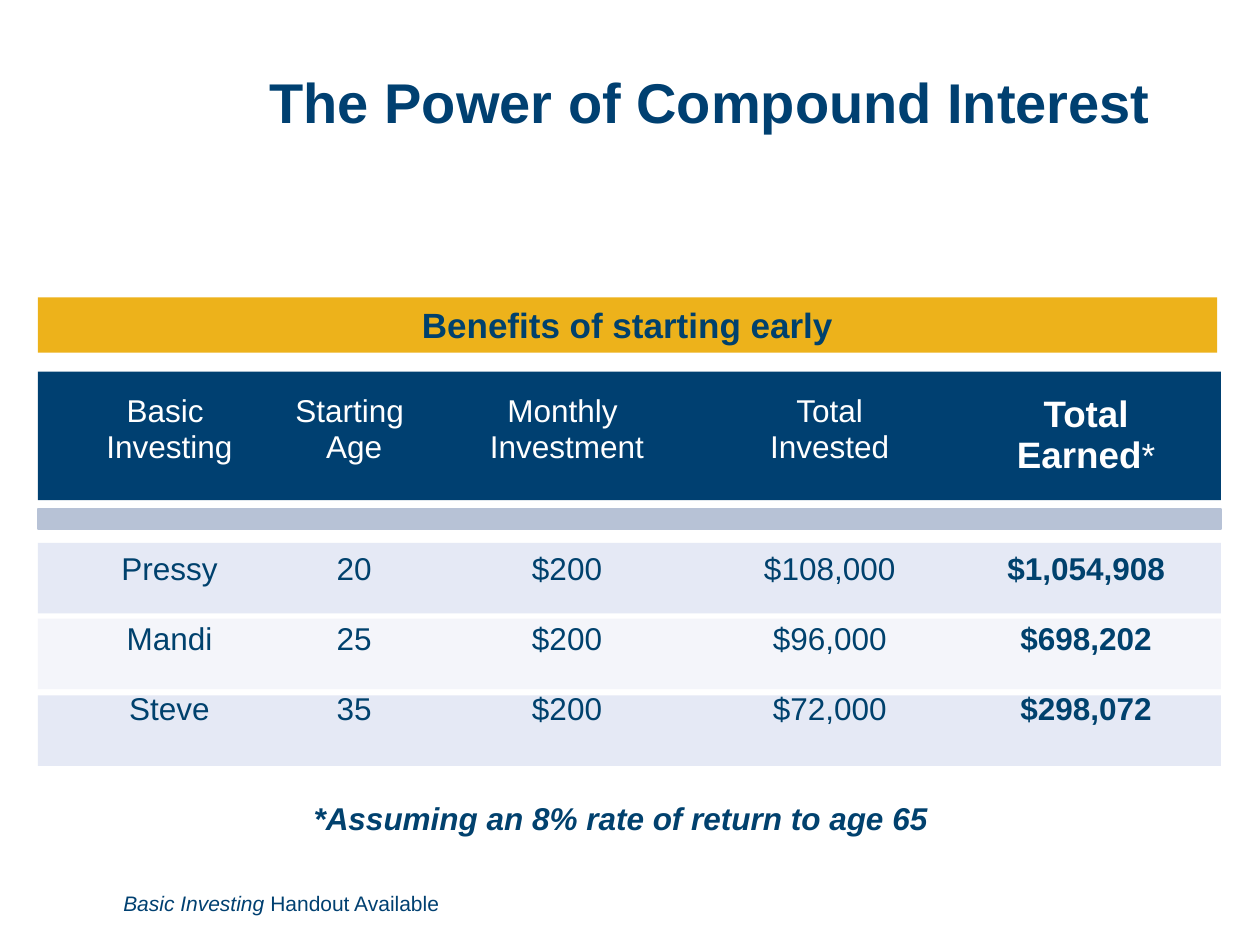
from lxml.etree import SubElement
from pptx import Presentation
from pptx.dml.color import RGBColor
from pptx.enum.shapes import MSO_SHAPE
from pptx.enum.text import MSO_ANCHOR, PP_ALIGN
from pptx.oxml.ns import qn
from pptx.util import Inches, Pt

NAVY = "004071"
TEXT_BLUE = "00416D"
WHITE = "FFFFFF"


def rgb(value):
    return RGBColor.from_string(value)


class SlideBuilder:
    font = "Arial"

    def __init__(self, prs):
        self.s = prs.slides.add_slide(prs.slide_layouts[5])

    def run(self, p, text, size, color, bold=False, italic=False):
        first, *rest = text.split("\n")
        for i, part in enumerate([first, *rest]):
            if i:
                p.add_line_break()
            r = p.add_run()
            r.text = part
            r.font.name = self.font
            r.font.size = Pt(size)
            r.font.bold = bold
            r.font.italic = italic
            r.font.color.rgb = rgb(color)

    def title(self, text, left, top, width, height):
        sp = self.s.shapes.title
        sp.left, sp.top = Inches(left), Inches(top)
        sp.width, sp.height = Inches(width), Inches(height)
        tf = sp.text_frame
        tf.word_wrap = True
        tf.vertical_anchor = MSO_ANCHOR.MIDDLE
        p = tf.paragraphs[0]
        p.alignment = PP_ALIGN.LEFT
        p.line_spacing = 0.9
        self.run(p, text, 32, NAVY, bold=True)

    def bar(self, group, top, width, height, fill, line=None):
        sp = group.shapes.add_shape(MSO_SHAPE.RECTANGLE, Inches(0.3), Inches(top),
                                    Inches(width), Inches(height))
        sp.shadow.inherit = False
        sp.fill.solid()
        sp.fill.fore_color.rgb = rgb(fill)
        if line:
            sp.line.color.rgb = rgb(line)
            sp.line.width = Pt(1)
        else:
            sp.line.fill.background()
        return sp

    def bar_text(self, sp, text):
        tf = sp.text_frame
        tf.word_wrap = True
        tf.vertical_anchor = MSO_ANCHOR.TOP
        p = tf.paragraphs[0]
        p.alignment = PP_ALIGN.CENTER
        self.run(p, text, 20, TEXT_BLUE, bold=True)

    def text(self, runs, left, top, width, height):
        sp = self.s.shapes.add_textbox(Inches(left), Inches(top), Inches(width), Inches(height))
        sp.text_frame.word_wrap = True
        p = sp.text_frame.paragraphs[0]
        for run in runs:
            self.run(p, *run)

    def cell(self, cell, paragraphs, gap=0):
        tc_pr = cell._tc.get_or_add_tcPr()
        for side in ("a:lnL", "a:lnR", "a:lnT", "a:lnB"):
            SubElement(SubElement(tc_pr, qn(side)), qn("a:noFill"))
        cell.fill.background()
        cell.margin_top = Inches(0.33)
        tf = cell.text_frame
        for i, runs in enumerate(paragraphs):
            p = tf.add_paragraph() if i else tf.paragraphs[0]
            p.alignment = PP_ALIGN.CENTER
            if i:
                p.space_before = Pt(gap)
            for run in runs:
                self.run(p, *run)

    def table(self, headers, columns, left, top, widths, heights):
        frame = self.s.shapes.add_table(2, len(widths), Inches(left), Inches(top),
                                        Inches(sum(widths)), Inches(sum(heights)))
        table = frame.table
        table.first_row = table.horz_banding = False
        for row, height in zip(table.rows, heights):
            row.height = Inches(height)
        last = len(widths) - 1
        for i, (width, header, values) in enumerate(zip(widths, headers, columns)):
            table.columns[i].width = Inches(width)
            self.cell(table.cell(0, i), header)
            self.cell(table.cell(1, i),
                      [[(value, 18, TEXT_BLUE, i == last)] for value in values], gap=19.8)


def main():
    prs = Presentation()
    prs.slide_width, prs.slide_height = Inches(10), Inches(7.5)
    b = SlideBuilder(prs)
    b.title("The Power of Compound Interest", 2.04, 0.11, 7.26, 1.45)

    group = b.s.shapes.add_group_shape()
    banner = b.bar(group, 2.36, 9.36, 0.44, "EDB21B")
    b.bar_text(banner, "Benefits of starting early")
    for top, fill in ((4.91, "F4F5FA"), (4.31, "E5E9F5"), (5.52, "E5E9F5")):
        b.bar(group, top, 9.39, 0.56, fill)
    b.bar(group, 4.04, 9.39, 0.16, "B7C2D6", line="B7C2D6")
    b.bar(group, 2.95, 9.39, 1.02, NAVY)

    headers = [[[(line, 18, WHITE)] for line in lines] for lines in (
        ["Basic \nInvesting"], ["Starting \nAge"], ["Monthly \nInvestment"],
        ["Total", "Invested"])]
    headers.append([[("Total", 21, WHITE, True)],
                    [("Earned", 21, WHITE, True), ("*", 20, WHITE)]])
    investors = [
        ("Pressy", "20", "$200", "$108,000", "$1,054,908"),
        ("Mandi", "25", "$200", "$96,000", "$698,202"),
        ("Steve", "35", "$200", "$72,000", "$298,072"),
    ]
    b.table(headers, zip(*investors), 0.47, 2.8,
            [1.75, 1.18, 2.2, 1.97, 2.1], [1.25, 2.5])

    b.text([("*Assuming an 8% rate of return to age 65", 18, "01416E", True, True)],
           2.39, 6.29, 5.5, 0.4)
    b.text([("Basic Investing ", 12, NAVY, False, True), ("Handout Available", 12, NAVY)],
           0.88, 7.02, 5.21, 0.3)
    prs.save("out.pptx")


if __name__ == "__main__":
    main()
